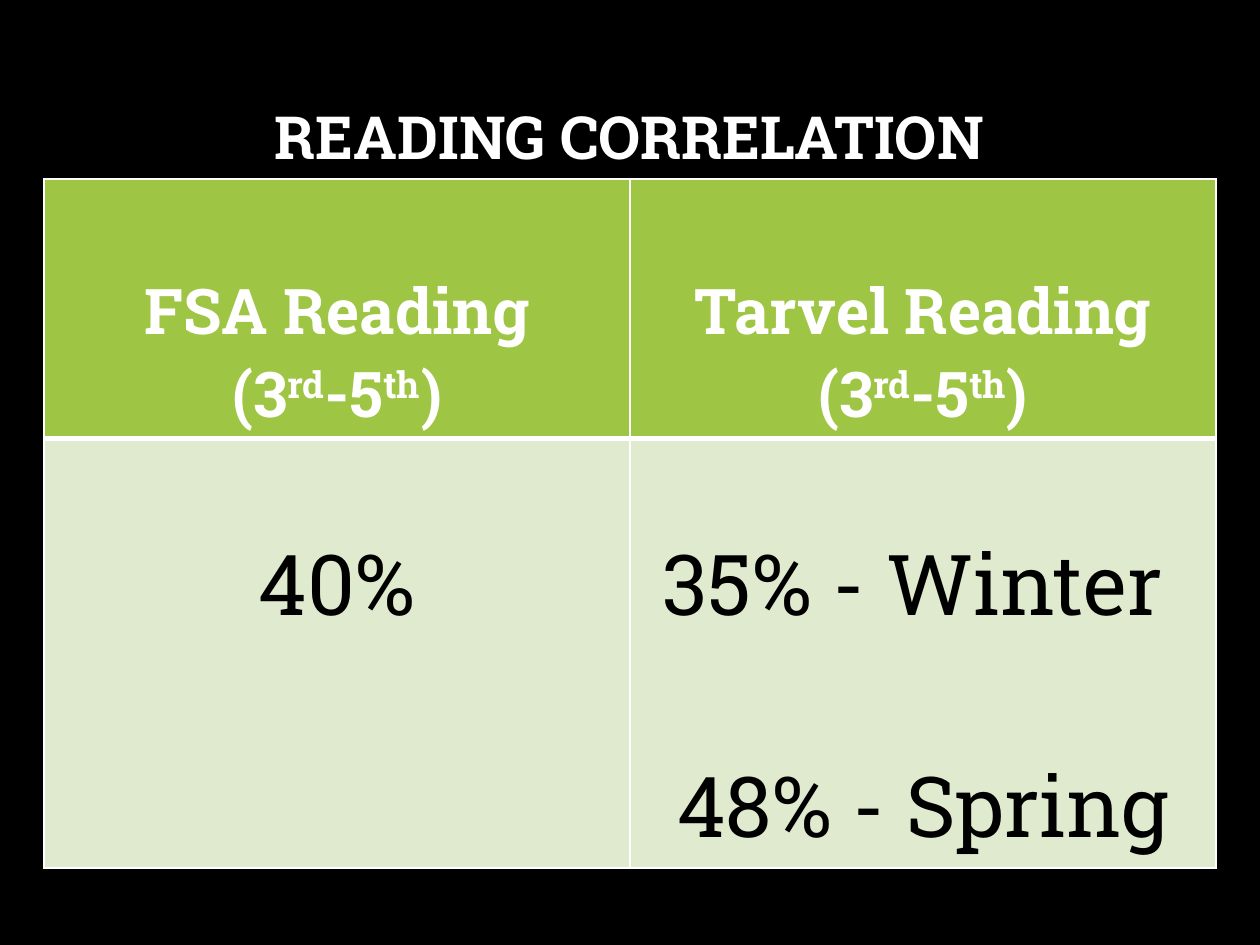
from dataclasses import dataclass

import lxml.etree
import pptx
import pptx.dml.color
import pptx.enum.text
import pptx.oxml.ns
import pptx.util

Inches = pptx.util.Inches
Pt = pptx.util.Pt
RGBColor = pptx.dml.color.RGBColor

BLACK = RGBColor(0x00, 0x00, 0x00)
WHITE = RGBColor(0xFF, 0xFF, 0xFF)
GREEN = RGBColor(0x9E, 0xC5, 0x44)
PALE_GREEN = RGBColor(0xDF, 0xEA, 0xCF)
FONT = "Roboto Slab"
GRADES = "(3^rd^-5^th^)"


@dataclass
class Row:
    height: float
    entries: list[list[str]]
    fill: RGBColor
    color: RGBColor
    size: float
    bold: bool
    gap: float
    borders: dict[str, float]


ROWS = [
    Row(2.06, [["FSA Reading", GRADES], ["Tarvel Reading", GRADES]],
        GREEN, WHITE, 36, True, 0, {"L": 1, "R": 1, "T": 1, "B": 3}),
    Row(3.41, [["40%"], ["35% - Winter ", "48% - Spring"]],
        PALE_GREEN, BLACK, 48, False, 63.3, {"L": 1, "R": 1, "T": 3, "B": 1}),
]


def write(frame, lines: list[str], *, size: float, color: RGBColor,
          bold: bool, gap: float = 0, spacing: float = 1.0) -> None:
    for index, line in enumerate(lines):
        paragraph = frame.paragraphs[0] if index == 0 else frame.add_paragraph()
        paragraph.alignment = pptx.enum.text.PP_ALIGN.CENTER
        paragraph.line_spacing = spacing
        paragraph.space_before = Pt(gap if index else 0)
        for position, part in enumerate(line.split("^")):
            run = paragraph.add_run()
            run.text = part
            run.font.name = FONT
            run.font.size = Pt(size)
            run.font.bold = bold
            run.font.color.rgb = color
            if position % 2:
                run.font._element.set("baseline", "30000")


def draw_borders(cell, borders: dict[str, float]) -> None:
    properties = cell._tc.get_or_add_tcPr()
    qn = pptx.oxml.ns.qn
    for side, width in borders.items():
        line = lxml.etree.SubElement(properties, qn(f"a:ln{side}"), w=str(Pt(width)))
        fill = lxml.etree.SubElement(line, qn("a:solidFill"))
        lxml.etree.SubElement(fill, qn("a:srgbClr"), val=str(WHITE))


def draw_title(slide) -> None:
    title = slide.shapes.add_textbox(Inches(0.75), Inches(0.67), Inches(8.49), Inches(0.88))
    title.text_frame.word_wrap = True
    title.text_frame.vertical_anchor = pptx.enum.text.MSO_ANCHOR.MIDDLE
    write(title.text_frame, ["READING CORRELATION"],
          size=34, color=WHITE, bold=True, spacing=0.9)


def draw_comparison(slide, rows: list[Row]) -> None:
    height = sum(row.height for row in rows)
    comparison = slide.shapes.add_table(
        len(rows), 2, Inches(0.35), Inches(1.42), Inches(9.3), Inches(height)).table
    for row_index, row in enumerate(rows):
        comparison.rows[row_index].height = Inches(row.height)
        for column_index, lines in enumerate(row.entries):
            cell = comparison.cell(row_index, column_index)
            cell.margin_top = Inches(0.71)
            draw_borders(cell, row.borders)
            cell.fill.solid()
            cell.fill.fore_color.rgb = row.fill
            write(cell.text_frame, lines, size=row.size, color=row.color,
                  bold=row.bold, gap=row.gap)


def main() -> None:
    deck = pptx.Presentation()
    deck.slide_width = Inches(10)
    deck.slide_height = Inches(7.5)
    slide = deck.slides.add_slide(deck.slide_layouts[6])
    slide.background.fill.solid()
    slide.background.fill.fore_color.rgb = BLACK
    draw_title(slide)
    draw_comparison(slide, ROWS)
    deck.save("out.pptx")


if __name__ == "__main__":
    main()
